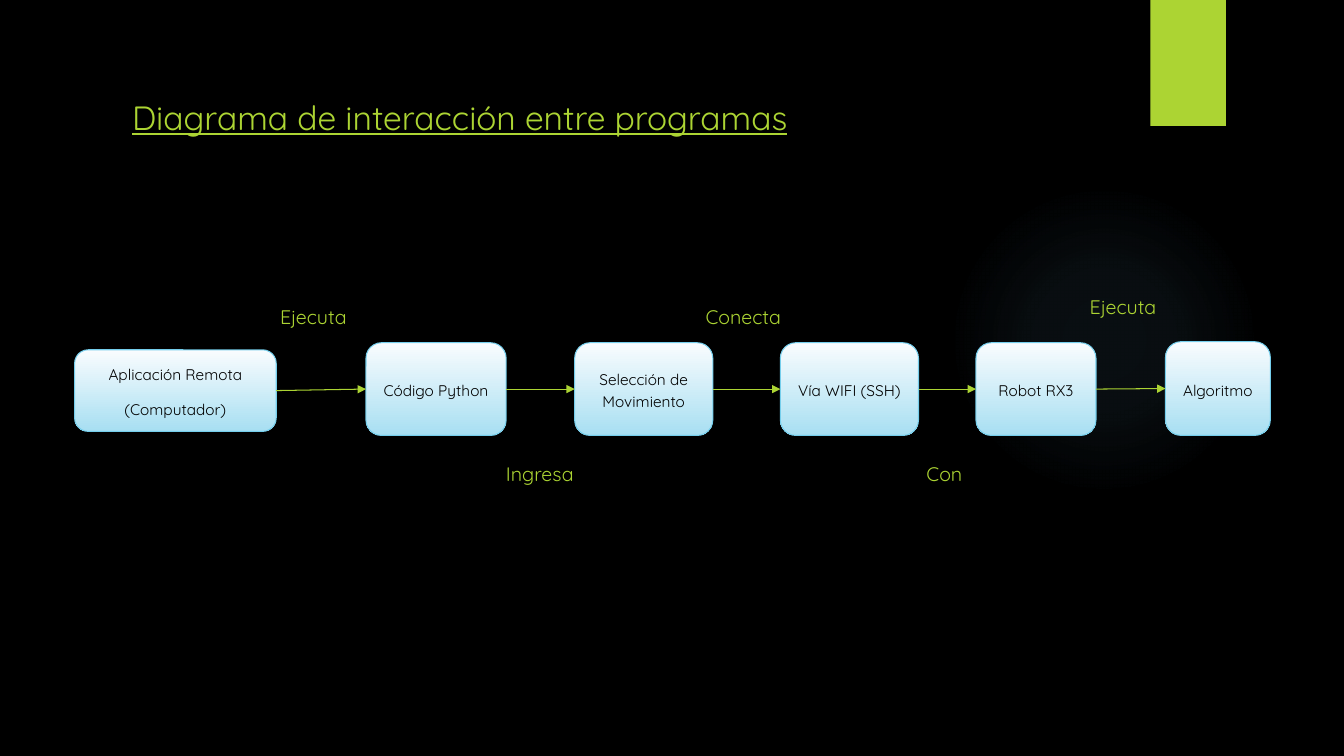
from lxml import etree
from pptx import Presentation
from pptx import util as u
from pptx.dml.color import RGBColor
from pptx.enum import shapes, text
from pptx.oxml import parse_xml
from pptx.oxml.ns import nsdecls, qn

TITLE = "Diagrama de interacción entre programas"
# lines, left, top, width, height (inches)
STEPS = [
    (["Aplicación Remota", "(Computador)"], 0.74, 3.47, 2.00, 0.81),
    (["Código Python"], 3.63, 3.40, 1.39, 0.92),
    (["Selección de Movimiento"], 5.70, 3.40, 1.37, 0.92),
    (["Vía WIFI (SSH)"], 7.74, 3.40, 1.37, 0.92),
    (["Robot RX3"], 9.68, 3.40, 1.19, 0.92),
    (["Algoritmo"], 11.56, 3.39, 1.04, 0.93),
]
# action, left, top, width (inches)
ACTIONS = [
    ("Ejecuta", 2.68, 2.98, 1.00),
    ("Ingresa", 4.92, 4.53, 1.00),
    ("Conecta", 6.90, 2.98, 1.19),
    ("Con", 9.09, 4.53, 0.75),
    ("Ejecuta", 10.71, 2.88, 1.00),
]
ACTION_HEIGHT = 0.34
GLOW_STOPS = [(0, 7), (36, 6), (69, 0)]  # position and opacity in percent

FONT = "Quicksand"
BLACK = RGBColor(0x00, 0x00, 0x00)
LIME = RGBColor(0xAC, 0xD4, 0x33)
ICE = RGBColor(0xF9, 0xFC, 0xFE)
SKY = RGBColor(0xA8, 0xDF, 0xF2)
EDGE = RGBColor(0x75, 0xCE, 0xEC)
GLOW = RGBColor(0x7A, 0xC4, 0xF0)


def inches(*lengths):
    return [u.Inches(length) for length in lengths]


def style(paragraph, size, colour, underline=None):
    for run in paragraph.runs:
        run.font.name = FONT
        run.font.size = u.Pt(size)
        run.font.color.rgb = colour
        run.font.underline = underline


def add_plain_shape(slide, kind, *box):
    shape = slide.shapes.add_shape(kind, *inches(*box))
    shape.shadow.inherit = False
    shape.line.fill.background()
    return shape


def add_glow(slide):
    """Faint round light that fades out towards its rim."""
    glow = add_plain_shape(slide, shapes.MSO_SHAPE.OVAL, 9.41, 1.83, 3.08, 3.08)
    glow.fill.background()
    stops = "".join(
        f'<a:gs pos="{position * 1000}"><a:srgbClr val="{GLOW}">'
        f'<a:alpha val="{opacity * 1000}"/></a:srgbClr></a:gs>'
        for position, opacity in GLOW_STOPS)
    gradient = parse_xml(
        f'<a:gradFill {nsdecls("a")}><a:gsLst>{stops}</a:gsLst><a:path path="circle">'
        '<a:fillToRect l="50000" t="50000" r="50000" b="50000"/></a:path></a:gradFill>')
    properties = glow.element.spPr
    properties.replace(properties.find(qn("a:noFill")), gradient)


def add_title(slide):
    title = slide.shapes.title
    title.left, title.top, title.width, title.height = inches(1.21, 0.91, 9.78, 0.6)
    frame = title.text_frame
    frame.text = TITLE
    frame.vertical_anchor = text.MSO_ANCHOR.TOP
    frame.paragraphs[0].alignment = text.PP_ALIGN.LEFT
    style(frame.paragraphs[0], 24, LIME, underline=True)


def add_step(slide, lines, *box):
    step = add_plain_shape(slide, shapes.MSO_SHAPE.ROUNDED_RECTANGLE, *box)
    step.fill.gradient()
    step.fill.gradient_angle = 270
    for stop, colour in zip(step.fill.gradient_stops, (ICE, SKY)):
        stop.color.rgb = colour
    step.line.color.rgb = EDGE
    step.line.width = u.Pt(0.75)
    frame = step.text_frame
    frame.word_wrap = True
    frame.vertical_anchor = text.MSO_ANCHOR.MIDDLE
    frame.text = "\n".join(lines)
    for paragraph in frame.paragraphs:
        paragraph.alignment = text.PP_ALIGN.CENTER
        paragraph.line_spacing = 1.15
        paragraph.space_after = u.Pt(10)
        style(paragraph, 11, BLACK)
    return step


def add_arrow(slide, source, target):
    arrow = slide.shapes.add_connector(shapes.MSO_CONNECTOR.STRAIGHT, 0, 0, 0, 0)
    arrow.begin_connect(source, 3)
    arrow.end_connect(target, 1)
    arrow.line.color.rgb = LIME
    arrow.line.width = u.Pt(0.75)
    properties = arrow.element.spPr
    etree.SubElement(properties.find(qn("a:ln")), qn("a:tailEnd"), type="triangle")
    etree.SubElement(properties, qn("a:effectLst"))


def add_action(slide, action, left, top, width):
    label = slide.shapes.add_textbox(*inches(left, top, width, ACTION_HEIGHT))
    frame = label.text_frame
    frame.word_wrap = True
    frame.auto_size = text.MSO_AUTO_SIZE.SHAPE_TO_FIT_TEXT
    frame.text = action
    style(frame.paragraphs[0], 14, LIME)


def main():
    deck = Presentation()
    deck.slide_width, deck.slide_height = inches(13.33, 7.5)
    slide = deck.slides.add_slide(deck.slide_layouts[5])
    slide.background.fill.solid()
    slide.background.fill.fore_color.rgb = BLACK

    add_glow(slide)
    tab = add_plain_shape(slide, shapes.MSO_SHAPE.RECTANGLE, 11.41, 0, 0.75, 1.25)
    tab.fill.solid()
    tab.fill.fore_color.rgb = LIME
    add_title(slide)

    steps = [add_step(slide, *step) for step in STEPS]
    for source, target in zip(steps, steps[1:]):
        add_arrow(slide, source, target)
    for action in ACTIONS:
        add_action(slide, *action)
    deck.save("out.pptx")


if __name__ == "__main__":
    main()
